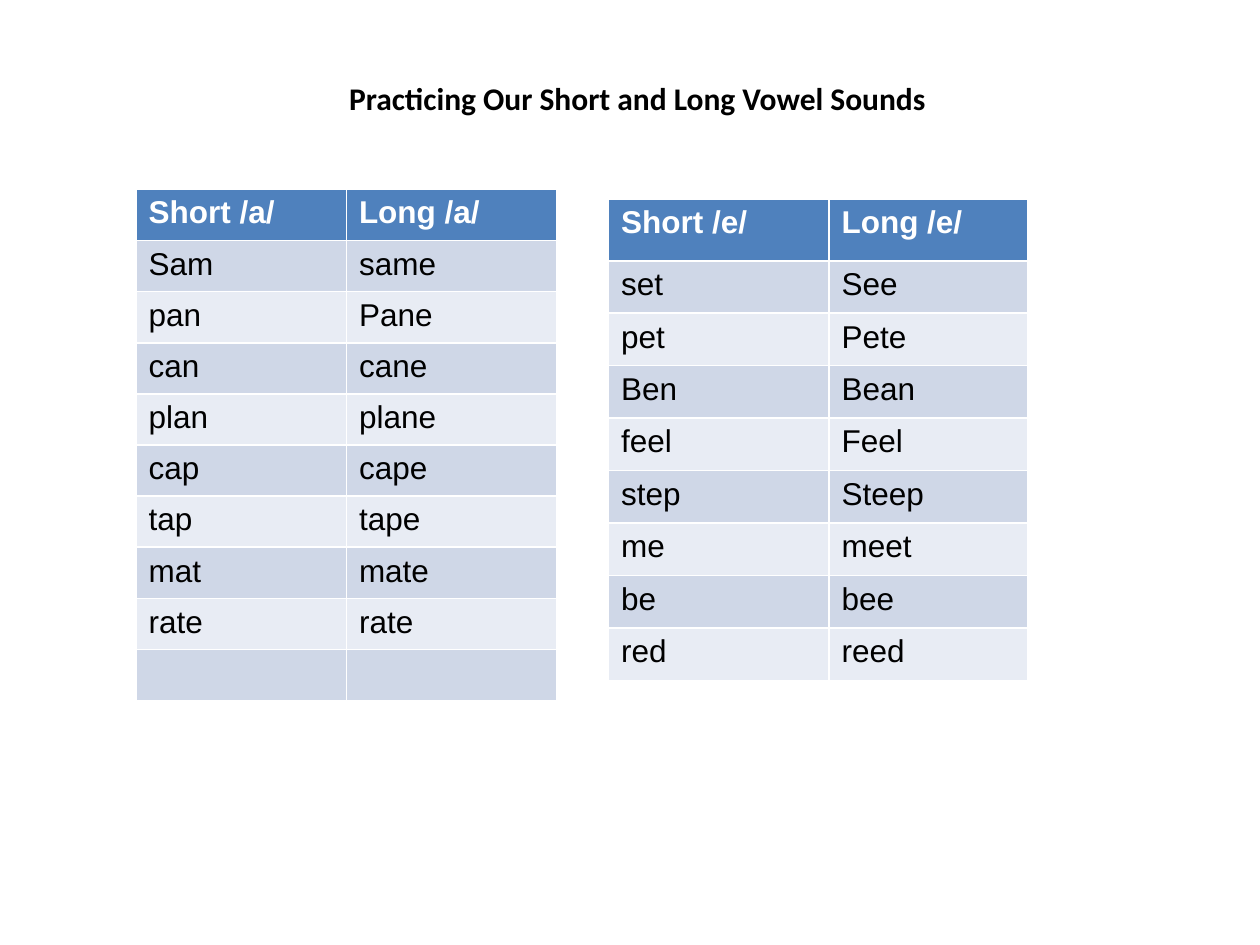
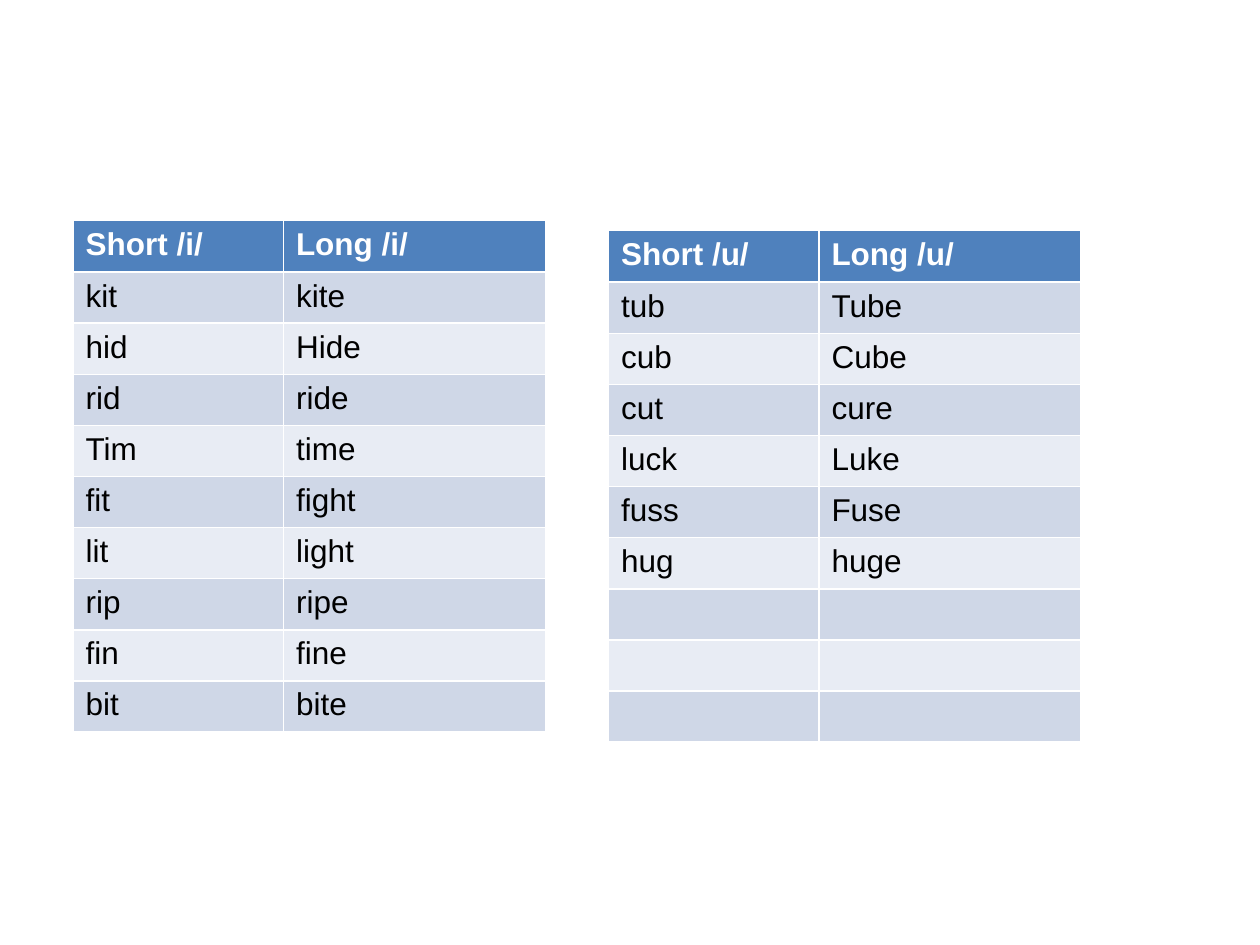
from dataclasses import dataclass

from pptx import Presentation
from pptx.dml.color import RGBColor
from pptx.enum.text import MSO_ANCHOR, PP_ALIGN
from pptx.slide import Slide
from pptx.util import Inches, Pt

HEADER_FILL = "4F81BD"
BAND_FILLS = ("CFD7E7", "E8ECF4")
WHITE = "FFFFFF"
BLACK = "000000"
TEXT_SIZE = Pt(18)
TITLE_ONLY_LAYOUT, BLANK_LAYOUT = 5, 6


@dataclass(frozen=True)
class VowelTable:
    vowel: str
    left: float
    top: float
    column_widths: tuple[float, float]
    word_pairs: tuple[str, ...]
    empty_rows: int = 0
    header_height: float = 0.41
    body_height: float = 3.65


@dataclass(frozen=True)
class Lesson:
    tables: tuple[VowelTable, ...]
    title: str = ""


LESSONS = (
    Lesson(
        title="Practicing Our Short and Long Vowel Sounds",
        tables=(
            VowelTable(
                "a", 1.08, 1.5, (1.67, 1.67),
                ("Sam same", "pan Pane", "can cane", "plan plane",
                 "cap cape", "tap tape", "mat mate", "rate rate"),
                empty_rows=1,
            ),
            VowelTable(
                "e", 4.83, 1.58, (1.75, 1.58),
                ("set See", "pet Pete", "Ben Bean", "feel Feel",
                 "step Steep", "me meet", "be bee", "red reed"),
                header_height=0.49, body_height=3.33,
            ),
        ),
    ),
    Lesson(
        tables=(
            VowelTable(
                "i", 0.58, 1.75, (1.67, 2.08),
                ("kit kite", "hid Hide", "rid ride", "Tim time", "fit fight",
                 "lit light", "rip ripe", "fin fine", "bit bite"),
            ),
            VowelTable(
                "u", 4.83, 1.83, (1.67, 2.08),
                ("tub Tube", "cub Cube", "cut cure",
                 "luck Luke", "fuss Fuse", "hug huge"),
                empty_rows=3,
            ),
        ),
    ),
)


def rgb(hex_colour: str) -> RGBColor:
    return RGBColor.from_string(hex_colour)


def format_runs(paragraph, face: str, colour: str, bold: bool) -> None:
    for run in paragraph.runs:
        run.font.name = face
        run.font.size = TEXT_SIZE
        run.font.bold = bold
        run.font.color.rgb = rgb(colour)


def add_title(slide: Slide, wording: str) -> None:
    title = slide.shapes.title
    title.left, title.top = Inches(2.67), Inches(0.58)
    title.width, title.height = Inches(4.82), Inches(0.4)
    frame = title.text_frame
    frame.text = wording
    frame.word_wrap = False
    frame.vertical_anchor = MSO_ANCHOR.TOP
    heading = frame.paragraphs[0]
    heading.alignment = PP_ALIGN.LEFT
    format_runs(heading, "Calibri", BLACK, bold=True)


def add_vowel_table(slide: Slide, spec: VowelTable) -> None:
    """Draw a header and word pairs; the table style supplies white rules."""
    header = (f"Short /{spec.vowel}/", f"Long /{spec.vowel}/")
    pairs = [tuple(pair.split()) for pair in spec.word_pairs]
    rows = [header, *pairs, *[("", "")] * spec.empty_rows]
    row_height = spec.body_height / (len(rows) - 1)

    table = slide.shapes.add_table(
        len(rows), len(header), Inches(spec.left), Inches(spec.top),
        Inches(sum(spec.column_widths)),
        Inches(spec.header_height + spec.body_height),
    ).table
    for column, width in zip(table.columns, spec.column_widths):
        column.width = Inches(width)

    for index, words in enumerate(rows):
        is_header = index == 0
        fill = HEADER_FILL if is_header else BAND_FILLS[(index - 1) % 2]
        table.rows[index].height = Inches(
            spec.header_height if is_header else row_height)
        for cell, word in zip(table.rows[index].cells, words):
            cell.fill.solid()
            cell.fill.fore_color.rgb = rgb(fill)
            if word:
                cell.text_frame.text = word
                format_runs(cell.text_frame.paragraphs[0], "Arial",
                            WHITE if is_header else BLACK, bold=is_header)


def main() -> None:
    presentation = Presentation()
    presentation.slide_width = Inches(10)
    presentation.slide_height = Inches(7.5)
    for lesson in LESSONS:
        layout = TITLE_ONLY_LAYOUT if lesson.title else BLANK_LAYOUT
        slide = presentation.slides.add_slide(
            presentation.slide_layouts[layout])
        if lesson.title:
            add_title(slide, lesson.title)
        for spec in lesson.tables:
            add_vowel_table(slide, spec)
    presentation.save("out.pptx")


if __name__ == "__main__":
    main()
